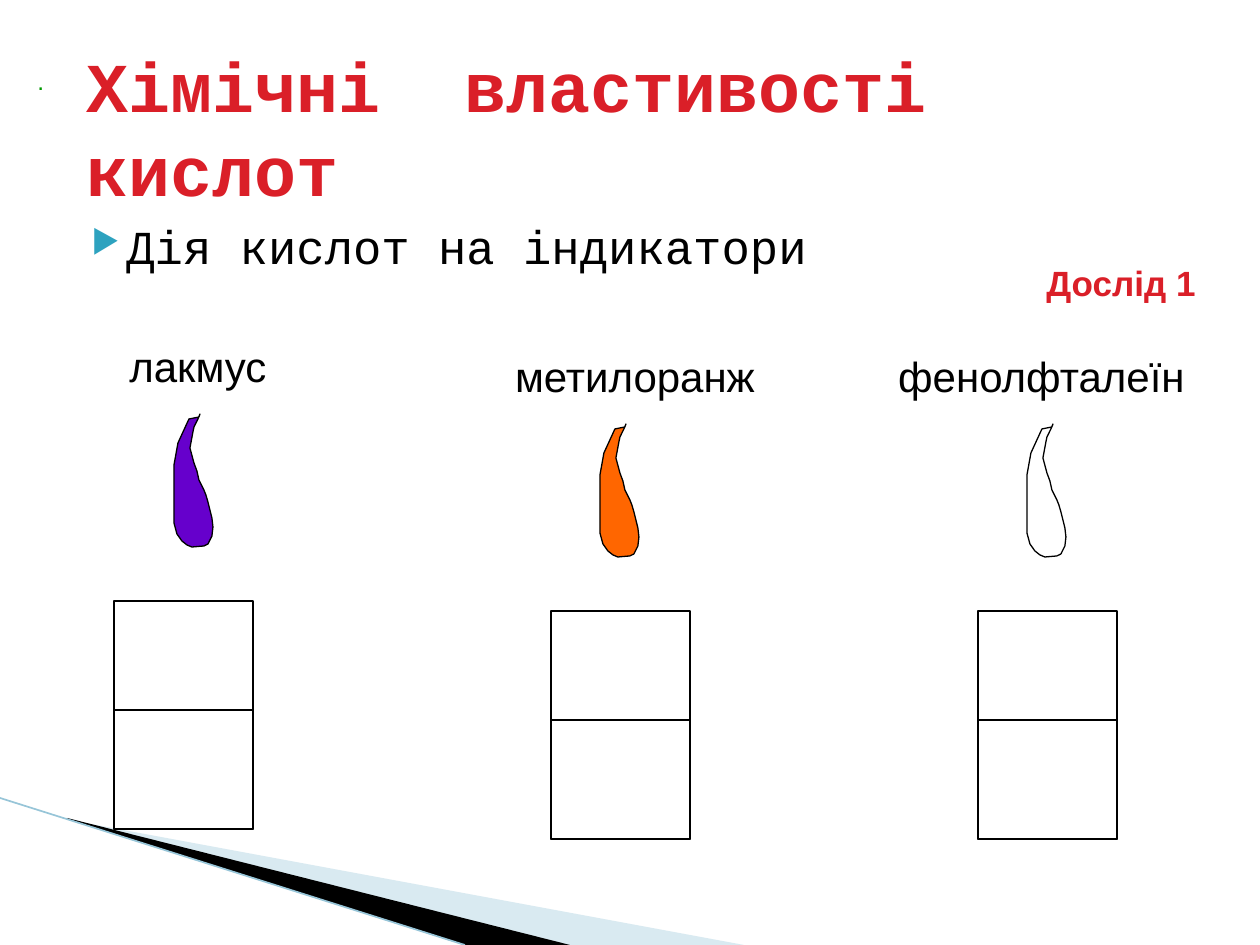
from lxml.etree import SubElement
from pptx import Presentation
from pptx.dml.color import RGBColor
from pptx.enum.shapes import MSO_CONNECTOR, MSO_SHAPE
from pptx.enum.text import MSO_ANCHOR, MSO_AUTO_SIZE, PP_ALIGN
from pptx.oxml.ns import qn
from pptx.util import Pt

SCALE = 914400 / 126  # EMU per px
BLACK, WHITE, RED = "000000", "FFFFFF", "DA1F28"

# Outline of an indicator drop, relative to its top left corner
DROP = [
    (26, 1), (25, 4), (15, 6), (4, 30), (0, 52), (0, 57), (0, 110),
    (3, 121), (8, 128), (13, 132), (18, 134), (30, 133), (34, 131),
    (38, 123), (39, 114), (38, 105), (34, 89), (32, 82), (30, 77),
    (25, 67), (23, 58), (20, 50), (16, 35), (19, 19), (20, 14), (24, 6),
]


def px(length):
    return round(length * SCALE)


def color(hex_value):
    return RGBColor.from_string(hex_value)


def paint(shape, fill, line=None):
    shape.shadow.inherit = False
    shape.fill.solid()
    shape.fill.fore_color.rgb = color(fill)
    if line:
        shape.line.color.rgb = color(line)
        shape.line.width = Pt(0.75)
    else:
        shape.line.fill.background()


def add_outline(slide, left, top, points, fill, line=None):
    moved = [(left + x, top + y) for x, y in points]
    builder = slide.shapes.build_freeform(*moved[0], scale=SCALE)
    builder.add_line_segments(moved[1:], close=True)
    outline = builder.convert_to_shape()
    paint(outline, fill, line)
    return outline


def add_text(slide, box, text, size, hex_value, font="Arial", bold=False,
             align=PP_ALIGN.LEFT, anchor=MSO_ANCHOR.TOP, grow=False):
    frame = slide.shapes.add_textbox(*map(px, box)).text_frame
    frame.word_wrap = True
    frame.vertical_anchor = anchor
    frame.auto_size = MSO_AUTO_SIZE.SHAPE_TO_FIT_TEXT if grow else MSO_AUTO_SIZE.NONE
    paragraph = frame.paragraphs[0]
    paragraph.alignment = align
    run = paragraph.add_run()
    run.text = text
    run.font.name = font
    run.font.size = Pt(size)
    run.font.bold = bold
    run.font.color.rgb = color(hex_value)
    return paragraph


def add_corner(slide, left, top):
    """Wedges and edge line in the lower left corner."""
    pale = add_outline(slide, left, top, [(69, 22), (744, 147), (569, 147), (69, 21)], "A0CBDC")
    tint = pale.fill._xPr.find(qn("a:solidFill"))[0]
    SubElement(tint, qn("a:alpha"), val="40000")
    add_outline(slide, left, top, [(67, 20), (570, 147), (464, 147), (68, 21)], BLACK)
    edge = slide.shapes.add_connector(
        MSO_CONNECTOR.STRAIGHT, px(left), px(top), px(left + 465), px(top + 147))
    edge.line.color.rgb = color("97C5D8")
    edge.line.width = Pt(0.95)
    SubElement(edge._element.spPr, qn("a:effectLst"))


def add_heading(slide, left, top):
    """Title and the bulleted topic below it."""
    add_text(slide, (left + 10, top, 1114, 179), "Хімічні  властивості кислот", 40, RED,
             "Courier New", bold=True, anchor=MSO_ANCHOR.MIDDLE)
    topic = add_text(slide, (left, top + 174, 1160, 666), "Дія кислот на індикатори", 27,
                     BLACK, "Courier New")
    properties = topic._p.get_or_add_pPr()
    properties.set("marL", str(px(50)))
    properties.set("indent", str(px(-35)))
    bullet_color = SubElement(properties, qn("a:buClr"))
    SubElement(bullet_color, qn("a:srgbClr"), val="2DA2BF")
    SubElement(properties, qn("a:buSzPct"), val="68000")
    SubElement(properties, qn("a:buChar"), char="▶")


def add_indicator(slide, left, top, name, label_left, label_width, drop_left, fill):
    """Label, drop and vessel of one indicator; left and top belong to the vessel."""
    vessel = slide.shapes.add_group_shape()
    for offset, height in ((0, 228), (109, 119)):
        part = vessel.shapes.add_shape(
            MSO_SHAPE.RECTANGLE, px(left), px(top + offset), px(139), px(height))
        paint(part, WHITE, BLACK)
    add_text(slide, (left + label_left, top - 267, label_width, 63), name, 24, BLACK,
             align=PP_ALIGN.CENTER, grow=True)
    add_outline(slide, left + drop_left, top - 188, DROP, fill, BLACK)


def main():
    presentation = Presentation()
    presentation.slide_width, presentation.slide_height = px(1260), px(945)
    slide = presentation.slides.add_slide(presentation.slide_layouts[6])

    add_corner(slide, 0, 798)
    add_heading(slide, 64, 37)

    # Indicators
    add_indicator(slide, 114, 601, "лакмус", -30, 228, 60, "6600CC")
    add_indicator(slide, 551, 611, "метилоранж", -90, 348, 49, "FF6600")
    add_indicator(slide, 978, 611, "фенолфталеїн", -120, 367, 49, WHITE)

    # Experiment number and the small dot beside the title
    add_text(slide, (1017, 255, 208, 55), "Дослід 1", 20, RED, bold=True,
             align=PP_ALIGN.CENTER, grow=True)
    add_text(slide, (25, 59, 1181, 43), ".", 14, "009900", align=PP_ALIGN.JUSTIFY,
             anchor=MSO_ANCHOR.MIDDLE, grow=True)

    presentation.save("out.pptx")


if __name__ == "__main__":
    main()
